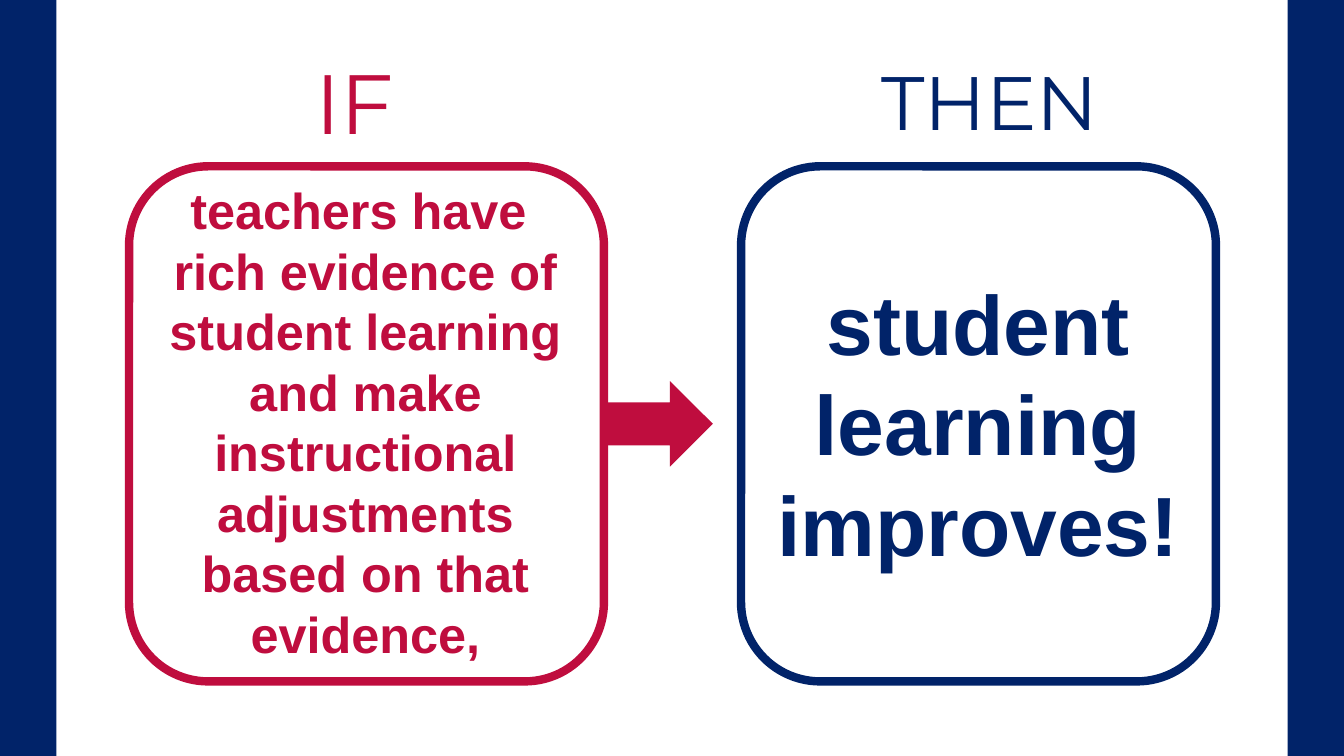
from pptx import Presentation
from pptx.dml.color import RGBColor
from pptx.enum import shapes, text
from pptx import util as u

HUES = {"red": "BF0D3E", "navy": "012369"}
KINDS = shapes.MSO_SHAPE
ALIGN = text.PP_ALIGN
W, H = 13.33, 7.5

deck = Presentation()
deck.slide_width, deck.slide_height = u.Inches(W), u.Inches(H)
slide = deck.slides.add_slide(deck.slide_layouts[6])


def draw(kind, box, hue, line=0):
    shape = slide.shapes.add_shape(kind, *map(u.Inches, box))
    shape.shadow.inherit = False
    tint = RGBColor.from_string(HUES[hue])
    if line:
        shape.fill.background()
        shape.line.color.rgb = tint
        shape.line.width = u.Pt(line)
    else:
        shape.fill.solid()
        shape.fill.fore_color.rgb = tint
        shape.line.fill.background()


def write(box, paras, size, font, hue, align, bold=False):
    frame = slide.shapes.add_textbox(*map(u.Inches, box)).text_frame
    frame.word_wrap = True
    for i, lines in enumerate(paras):
        para = frame.add_paragraph() if i else frame.paragraphs[0]
        para.alignment = align
        for j, words in enumerate(lines):
            if j:
                para.add_line_break()
            run = para.add_run()
            run.text = words
            run.font.name = font
            run.font.size = u.Pt(size)
            run.font.bold = bold
            run.font.color.rgb = RGBColor.from_string(HUES[hue])


cause = [["teachers have ",
          "rich evidence of student learning and make instructional "
          "adjustments based on that evidence,"]]
effect = [["student"], ["learning improves!"]]

edge = 0.56
for left in (0, W - edge):
    draw(KINDS.RECTANGLE, (left, 0, edge, H), "navy")

for left, hue in ((1.28, "red"), (7.35, "navy")):
    draw(KINDS.ROUNDED_RECTANGLE, (left, 1.65, 4.71, 5.11), hue, 6)
draw(KINDS.RIGHT_ARROW, (5.98, 3.78, 1.09, 0.85), "red")

write((3.03, 0.45, 1.2, 1.11), [["IF"]], 60, "Montserrat", "red", ALIGN.LEFT)
write((8.42, 0.5, 2.57, 1.01), [["THEN"]], 54, "Montserrat", "navy", ALIGN.RIGHT)
write((1.3, 1.73, 4.65, 4.95), cause, 36, "Arial", "red", ALIGN.CENTER, True)
write((7.38, 2.64, 4.64, 3.13), effect, 60, "Arial", "navy", ALIGN.CENTER, True)

deck.save("out.pptx")
